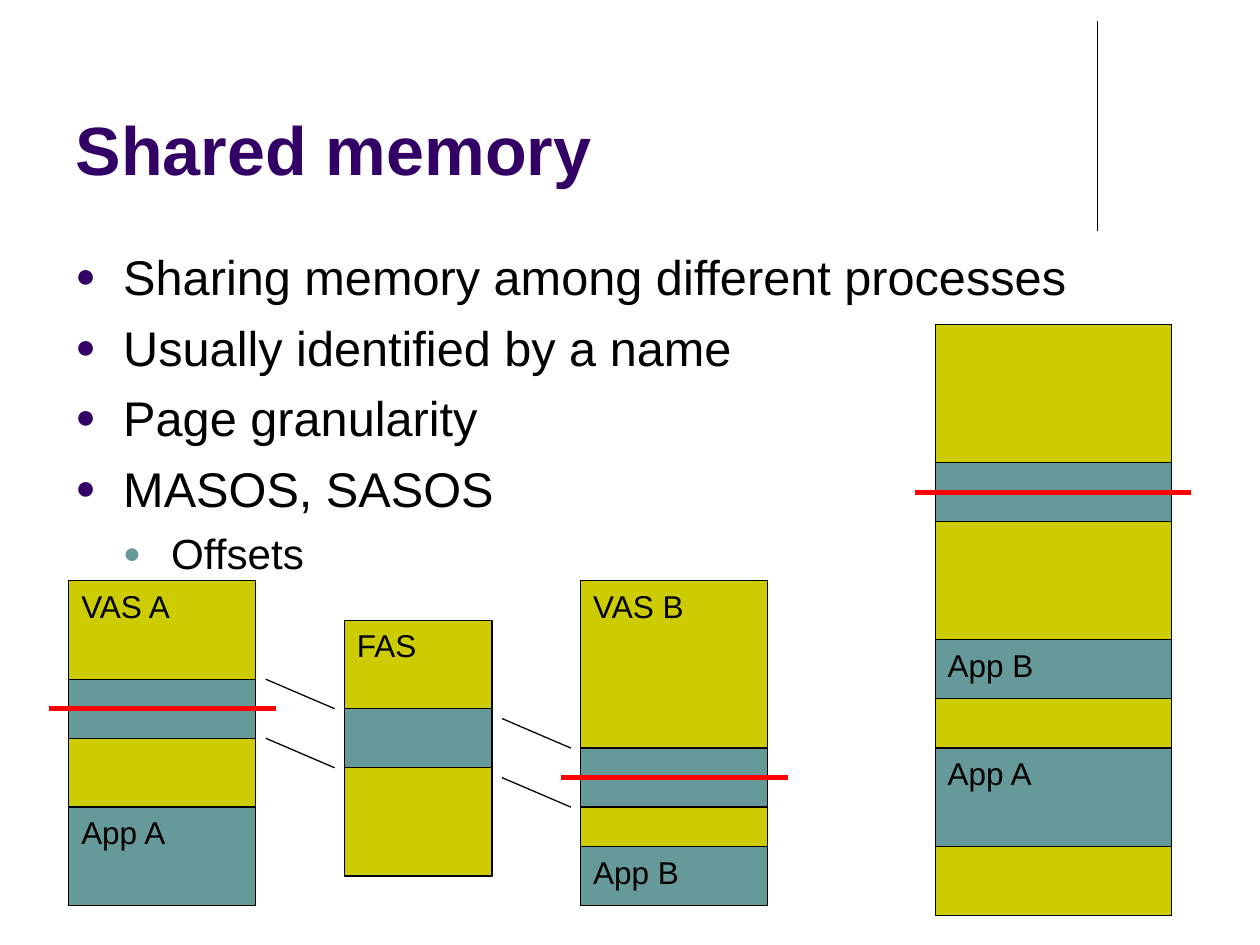
import pptx
import pptx.util
import pptx.dml.color
import pptx.enum.shapes
import pptx.enum.text
import pptx.oxml.ns
from lxml import etree

Pt = pptx.util.Pt
MSO = pptx.enum.text
UNIT = 45 / 8  # grid step in points; the memory maps are laid out on it

COLORS = {"title": "330066", "text": "000000", "space": "CCCC00",
          "used": "669999", "cut": "FF0000"}
TITLE = "Shared memory"
BULLETS = [
    (0, "Sharing memory among different processes"),
    (0, "Usually identified by a name"),
    (0, "Page granularity"),
    (0, "MASOS, SASOS"),
    (1, "Offsets"),
]
LEVELS = [
    {"size": 27.8, "gap": 7, "bullet": "title"},
    {"size": 24.1, "gap": 6, "bullet": "used"},
]
# Grid units. Bands: top, height, label. Cut: top of the band struck through.
SPACES = [
    {"box": (7, 59, 19, 33), "label": "VAS A", "cut": 69,
     "bands": [(69, 6, ""), (82, 10, "App A")]},
    {"box": (35, 63, 15, 26), "label": "FAS", "cut": None,
     "bands": [(72, 6, "")]},
    {"box": (59, 59, 19, 33), "label": "VAS B", "cut": 76,
     "bands": [(76, 6, ""), (86, 6, "App B")]},
    {"box": (95, 33, 24, 60), "label": "", "cut": 47,
     "bands": [(47, 6, ""), (65, 6, "App B"), (76, 10, "App A")]},
]
BAND = 6
LINKS = [(27, 69), (51, 73)]  # left end of the upper line of each pair
RUN, DROP = 7, 3


def rgb(name):
    return pptx.dml.color.RGBColor.from_string(COLORS[name])


def style(item, **values):
    for name, value in values.items():
        setattr(item, name, value)


def set_font(font, size, color="text", bold=False):
    style(font, name="Arial", size=Pt(size), bold=bold)
    font.color.rgb = rgb(color)


def draw_line(slide, ends, color="text", width=0.75):
    line = slide.shapes.add_connector(
        pptx.enum.shapes.MSO_CONNECTOR.STRAIGHT, *map(Pt, ends))
    line.line.color.rgb = rgb(color)
    line.line.width = Pt(width)
    etree.SubElement(line._element.spPr, pptx.oxml.ns.qn("a:effectLst"))


def draw_box(slide, box, color, label):
    """Draw a block given in grid units, with its label at the top left."""
    shape = slide.shapes.add_shape(
        pptx.enum.shapes.MSO_SHAPE.RECTANGLE, *(Pt(n * UNIT) for n in box))
    shape.shadow.inherit = False
    shape.fill.solid()
    shape.fill.fore_color.rgb = rgb(color)
    shape.line.color.rgb = rgb("text")
    shape.line.width = Pt(0.75)
    if label:
        frame = shape.text_frame
        style(frame, text=label, word_wrap=True,
              vertical_anchor=MSO.MSO_ANCHOR.TOP)
        para = frame.paragraphs[0]
        para.alignment = MSO.PP_ALIGN.LEFT
        set_font(para.font, 18)


def add_bullet(para, level, color):
    props = para._p.get_or_add_pPr()
    props.set("marL", str(Pt(27.36 * (level + 1))))
    props.set("indent", str(Pt(-27.36)))
    for tag, child, value in (("buClr", "srgbClr", COLORS[color]),
                              ("buSzPct", None, "70000"),
                              ("buFont", None, "Arial"),
                              ("buChar", None, "●")):
        node = etree.SubElement(props, pptx.oxml.ns.qn("a:" + tag))
        if child:
            node = etree.SubElement(node, pptx.oxml.ns.qn("a:" + child))
        key = {"buFont": "typeface", "buChar": "char"}.get(tag, "val")
        node.set(key, value)


def add_title(slide):
    title = slide.shapes.title
    style(title, left=Pt(36), top=Pt(9.4), width=Pt(594), height=Pt(102.2))
    frame = title.text_frame
    style(frame, text=TITLE, word_wrap=True, auto_size=MSO.MSO_AUTO_SIZE.NONE,
          vertical_anchor=MSO.MSO_ANCHOR.BOTTOM)
    para = frame.paragraphs[0]
    para.alignment = MSO.PP_ALIGN.LEFT
    set_font(para.font, 39, "title", True)


def add_list(slide):
    box = slide.shapes.add_textbox(Pt(36), Pt(135), Pt(648), Pt(190.8))
    frame = box.text_frame
    style(frame, word_wrap=True, margin_top=Pt(6))
    for i, (level, text) in enumerate(BULLETS):
        para = frame.add_paragraph() if i else frame.paragraphs[0]
        look = LEVELS[level]
        style(para, text=text, level=level,
              space_before=Pt(look["gap"] if i else 0))
        add_bullet(para, level, look["bullet"])
        set_font(para.font, look["size"])


def add_space(slide, space):
    left, top, width, height = space["box"]
    draw_box(slide, space["box"], "space", space["label"])
    for start, size, label in space["bands"]:
        draw_box(slide, (left, start, width, size), "used", label)
    if space["cut"]:
        mid = space["cut"] + BAND / 2
        ends = (left - 2, mid, left + width + 2, mid)
        draw_line(slide, [n * UNIT for n in ends], "cut", 3)


def main():
    deck = pptx.Presentation()
    style(deck, slide_width=Pt(720), slide_height=Pt(540))
    slide = deck.slides.add_slide(deck.slide_layouts[5])
    draw_line(slide, (627, 12, 627, 132))
    add_title(slide)
    add_list(slide)
    for space in SPACES:
        add_space(slide, space)
    for left, top in LINKS:
        for y in (top, top + BAND):
            ends = (left, y, left + RUN, y + DROP)
            draw_line(slide, [n * UNIT for n in ends])
    deck.save("out.pptx")


if __name__ == "__main__":
    main()
